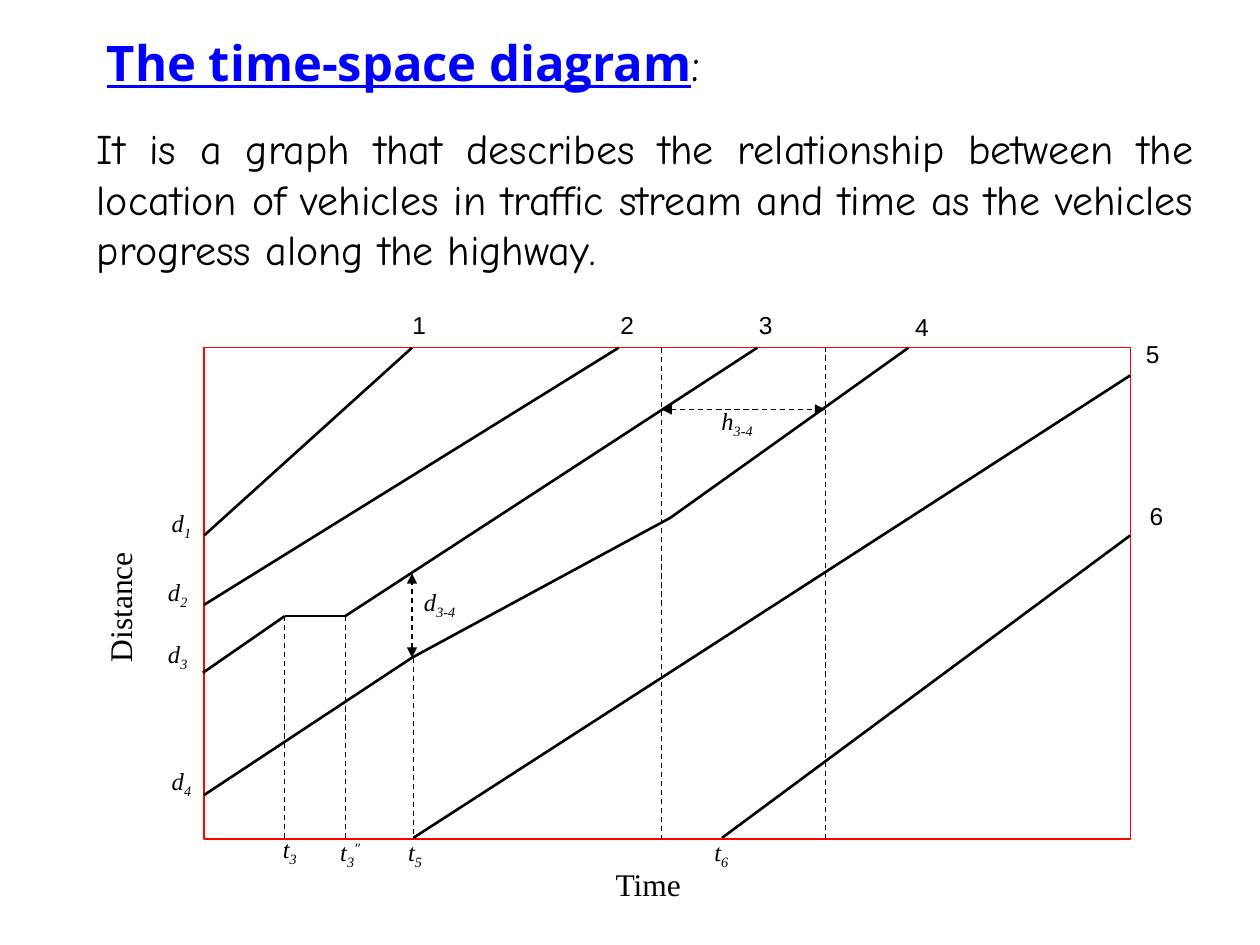
from dataclasses import dataclass
from itertools import pairwise

import pptx
import pptx.dml.color
import pptx.enum.dml
import pptx.enum.shapes
import pptx.enum.text
import pptx.oxml.ns
import pptx.util
from lxml import etree

BLACK = pptx.dml.color.RGBColor(0x00, 0x00, 0x00)
WHITE = pptx.dml.color.RGBColor(0xFF, 0xFF, 0xFF)
RED = pptx.dml.color.RGBColor(0xFF, 0x00, 0x00)
BLUE = pptx.dml.color.RGBColor(0x00, 0x00, 0xFF)

SERIF = "Times New Roman"
HAND = "Comic Neue"
SUBSCRIPT, SUPERSCRIPT = -25000, 30000
ALIGN = pptx.enum.text.PP_ALIGN

deck = pptx.Presentation()
deck.slide_width = pptx.util.Inches(10)
deck.slide_height = pptx.util.Inches(7.5)
slide = deck.slides.add_slide(deck.slide_layouts[6])

# Every position below is counted in columns and rows of this grid
COLUMN = deck.slide_width // 1000
ROW = deck.slide_height // 750

Point = tuple[int, int]


@dataclass(frozen=True)
class Box:
    left: int
    top: int
    width: int
    height: int

    def lengths(self) -> tuple[int, int, int, int]:
        return (self.left * COLUMN, self.top * ROW,
                self.width * COLUMN, self.height * ROW)


@dataclass(frozen=True)
class Words:
    text: str
    size: float = 14
    font: str = SERIF
    color: pptx.dml.color.RGBColor = BLACK
    bold: bool = False
    italic: bool = False
    underline: bool = False
    baseline: int = 0


@dataclass(frozen=True)
class Guide:
    start: Point
    end: Point
    arrows: bool = False


def add_text(box: Box, *parts: Words, align=None, wrap: bool = True):
    frame = slide.shapes.add_textbox(*box.lengths()).text_frame
    frame.word_wrap = wrap
    paragraph = frame.paragraphs[0]
    paragraph.alignment = align
    for part in parts:
        run = paragraph.add_run()
        run.text = part.text
        run.font.size = pptx.util.Pt(part.size)
        run.font.name = part.font
        run.font.color.rgb = part.color
        run.font.bold = part.bold
        run.font.italic = part.italic
        run.font.underline = part.underline
        if part.baseline:
            run.font._element.set("baseline", str(part.baseline))
    return frame


def add_symbol(box: Box, letter: str, index: str, mark: str = "") -> None:
    parts = [Words(letter, italic=True),
             Words(index, italic=True, baseline=SUBSCRIPT)]
    if mark:
        parts.append(Words(mark, italic=True, baseline=SUPERSCRIPT))
    add_text(box, *parts, align=ALIGN.CENTER)


def add_vehicle_number(left: int, top: int, number: int) -> None:
    frame = add_text(Box(left, top, 30, 46), Words(str(number)))
    paragraph = frame.paragraphs[0]
    # Right-to-left digits take the complex-script font
    paragraph._p.get_or_add_pPr().set("rtl", "1")
    etree.SubElement(paragraph.runs[0].font._element,
                     pptx.oxml.ns.qn("a:cs"), typeface="Arial")


def add_line(start: Point, end: Point, width: float):
    line = slide.shapes.add_connector(
        pptx.enum.shapes.MSO_CONNECTOR.STRAIGHT,
        start[0] * COLUMN, start[1] * ROW, end[0] * COLUMN, end[1] * ROW)
    line.line.color.rgb = BLACK
    line.line.width = pptx.util.Pt(width)
    etree.SubElement(line._element.spPr, pptx.oxml.ns.qn("a:effectLst"))
    return line


def add_guide(guide: Guide) -> None:
    line = add_line(guide.start, guide.end, 0.75).line
    line.dash_style = pptx.enum.dml.MSO_LINE.DASH
    if guide.arrows:
        for tag in ("a:headEnd", "a:tailEnd"):
            etree.SubElement(line._get_or_add_ln(), pptx.oxml.ns.qn(tag), type="triangle")


# Definition and title
definition = add_text(
    Box(67, 92, 890, 131),
    Words("It is a graph that describes the relationship between the location of "
          "vehicles in traffic stream and time as the vehicles progress along the "
          "highway.", 24, HAND),
    align=ALIGN.JUSTIFY)
definition.vertical_anchor = pptx.enum.text.MSO_ANCHOR.MIDDLE
title = add_text(
    Box(75, 21, 544, 57),
    Words("The time-space diagram", 28, "Open Sans", BLUE, bold=True, underline=True),
    Words(":", 28, HAND),
    wrap=False)
for heading in (definition, title):
    heading.auto_size = pptx.enum.text.MSO_AUTO_SIZE.SHAPE_TO_FIT_TEXT

# Plot area
LEFT, TOP, RIGHT, BOTTOM = 162, 276, 897, 666
plot = slide.shapes.add_shape(
    pptx.enum.shapes.MSO_SHAPE.RECTANGLE,
    *Box(LEFT, TOP, RIGHT - LEFT, BOTTOM - TOP).lengths())
plot.shadow.inherit = False
plot.fill.solid()
plot.fill.fore_color.rgb = WHITE
plot.line.color.rgb = RED
plot.line.width = pptx.util.Pt(0.75)

# Path of each vehicle, from its entry to its exit
STOP, RESTART = (226, 489), (274, 489)
SLOWDOWN = (327, 522)
VEHICLE_PATHS: list[list[Point]] = [
    [(LEFT, 425), (327, TOP)],
    [(LEFT, 480), (491, TOP)],
    [(161, 534), STOP, RESTART, (601, TOP)],
    [(LEFT, 631), SLOWDOWN, (532, 411), (721, TOP)],
    [(328, 665), (RIGHT, 298)],
    [(573, 665), (RIGHT, 425)],
]
for path_points in VEHICLE_PATHS:
    for start, end in pairwise(path_points):
        add_line(start, end, 1.5)

# Dashed time lines, then the spacing and headway arrows
HEADWAY_START, HEADWAY_END = 525, 655
for guide in (
    Guide((328, 522), (328, 665)),
    Guide(RESTART, (274, 665)),
    Guide(STOP, (226, BOTTOM)),
    Guide((HEADWAY_START, 667), (HEADWAY_START, TOP)),
    Guide((HEADWAY_END, BOTTOM), (HEADWAY_END, TOP)),
    Guide(SLOWDOWN, (327, 455), arrows=True),
    Guide((HEADWAY_START, 325), (HEADWAY_END, 325), arrows=True),
):
    add_guide(guide)

# Distance and time symbols
for index, (left, top) in enumerate([(118, 398), (115, 453), (115, 502), (118, 603)], 1):
    add_symbol(Box(left, top, 52, 47), "d", str(index))
add_symbol(Box(316, 461, 66, 47), "d", "3-4")
add_symbol(Box(552, 317, 66, 47), "h", "3-4")
add_symbol(Box(202, 657, 56, 49), "t", "3")
add_symbol(Box(250, 659, 56, 49), "t", "3", '"')
add_symbol(Box(306, 659, 47, 46), "t", "5")
add_symbol(Box(549, 659, 47, 46), "t", "6")

# Vehicle numbers
NUMBER_CORNERS = [(318, 241), (483, 241), (593, 241), (717, 243), (900, 264), (903, 393)]
for number, (left, top) in enumerate(NUMBER_CORNERS, 1):
    add_vehicle_number(left, top, number)

# Axis titles
add_text(Box(457, 682, 115, 46), Words("Time", 18), align=ALIGN.CENTER)
distance = add_text(Box(75, 409, 54, 146), Words("Distance", 18), align=ALIGN.CENTER)
distance._txBody.bodyPr.set("vert", "vert270")

deck.save("out.pptx")
